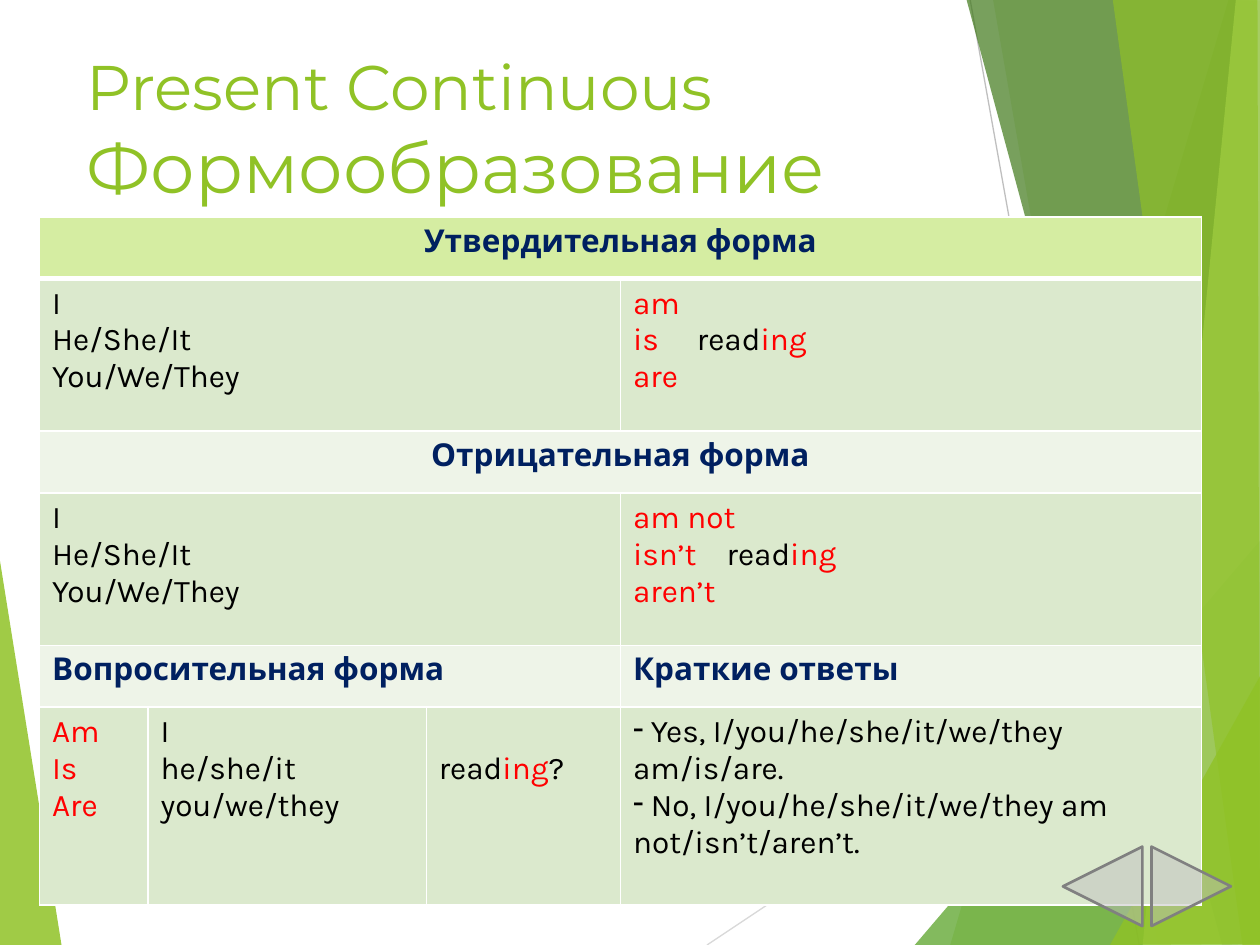
from lxml import etree
from pptx import Presentation
from pptx import util as u
from pptx.dml.color import RGBColor
from pptx.enum import shapes, text
from pptx.oxml import ns

Pt = u.Pt
COLORS = {
    "lime": "90C226", "green": "54A021", "forest": "3F7819", "pale": "C0E474",
    "white": "FFFFFF", "light_line": "D9D9D9", "gray": "BFBFBF", "outline": "808080",
    "header": "D5EDA2", "form": "DBE9CD", "heading": "EEF4E8",
    "navy": "002060", "red": "FF0000", "black": "000000",
}

# Facets and hairlines of the background, back to front; points on the slide
LEFT_FACET = ("lime", 85, [(-0.7, 316), (35.3, 540.7), (-0.7, 540)])
HAIRLINES = [
    ("light_line", (404, 540), (720.7, 329)),
    ("gray", (554.4, 0), (651, 540)),
]
RIGHT_FACETS = [
    ("lime", 30, [(702, 0), (543, 540), (721.4, 540.7), (720.7, 0.7)]),
    ("lime", 20, [(567.4, -0.7), (661.7, 540), (720.7, 540), (720.7, -0.7)]),
    ("green", 72, [(522.7, 540), (720, 309), (720.7, 540)]),
    ("forest", 70, [(552.2, -0.7), (698.4, 540), (720.7, 539.3), (720.7, -0.7)]),
    ("pale", 70, [(706.3, -0.7), (653, 540), (720.7, 540), (720, -0.7)]),
    ("lime", 65, [(635.8, -0.7), (710, 540), (720, 540), (718.6, -0.7)]),
    ("lime", 80, [(634.3, 540), (720.7, 385.2), (720.7, 539.3)]),
]

COLUMNS = [62, 159, 111, 332]
HEADING_ROW, FORM_ROW, QUESTION_ROW = 35.3, 87.1, 113
LINE_PITCH = 21


def rgb(name):
    return RGBColor.from_string(COLORS[name])


def add_xml(parent, tag, **attributes):
    return etree.SubElement(parent, ns.qn(tag), attributes)


def fill_shape(shape, color, opacity):
    shape.shadow.inherit = False
    shape.fill.solid()
    shape.fill.fore_color.rgb = rgb(color)
    for tint in shape._element.spPr.iter(ns.qn("a:srgbClr")):
        add_xml(tint, "a:alpha", val=str(opacity * 1000))


def add_facet(slide, color, opacity, points):
    corners = [(Pt(x), Pt(y)) for x, y in points]
    builder = slide.shapes.build_freeform(*corners[0])
    builder.add_line_segments(corners[1:], close=True)
    facet = builder.convert_to_shape()
    fill_shape(facet, color, opacity)
    facet.line.fill.background()


def add_hairline(slide, color, start, end):
    hairline = slide.shapes.add_connector(
        shapes.MSO_CONNECTOR.STRAIGHT, *(Pt(v) for v in start + end))
    hairline.line.color.rgb = rgb(color)
    hairline.line.width = Pt(0.75)
    add_xml(hairline._element.spPr, "a:effectLst")


def add_run(paragraph, words, size, font, color, bold=False):
    run = paragraph.add_run()
    run.text = words
    run.font.size = Pt(size)
    run.font.name = font
    run.font.bold = bold
    run.font.color.rgb = rgb(color)


def add_title(slide):
    title = slide.shapes.add_textbox(Pt(42.5), Pt(21), Pt(500), Pt(103.7))
    frame = title.text_frame
    frame.word_wrap = True
    frame.vertical_anchor = text.MSO_ANCHOR.MIDDLE
    paragraph = frame.paragraphs[0]
    add_run(paragraph, "Present Continuous", 36, "Montserrat", "lime")
    paragraph.add_line_break()
    add_run(paragraph, "Формообразование", 40, "Montserrat", "lime")


def set_borders(cell, top, bottom):
    for side, width in (("L", 1), ("R", 1), ("T", top), ("B", bottom)):
        border = add_xml(cell._tc.get_or_add_tcPr(), "a:ln" + side, w=str(Pt(width)))
        add_xml(add_xml(border, "a:solidFill"), "a:srgbClr", val=COLORS["white"])


def write_cell(cell, lines, bold=False, centered=False, tab=None, dashes=False):
    """Each line is a list of (words, color) runs."""
    frame = cell.text_frame
    for index, line in enumerate(lines):
        paragraph = frame.add_paragraph() if index else frame.paragraphs[0]
        if centered:
            paragraph.alignment = text.PP_ALIGN.CENTER
        properties = paragraph._p.get_or_add_pPr()
        if dashes:
            properties.set("marL", "0")
            properties.set("indent", "0")
            add_xml(properties, "a:buChar", char="-")
        if tab:
            add_xml(add_xml(properties, "a:tabLst"), "a:tab", pos=str(Pt(tab)), algn="l")
        for words, color in line:
            add_run(paragraph, words, 18, "Karla", color, bold)


def in_color(color, *lines):
    return [[(words, color)] for words in lines]


def write_heading(cell, words, centered=False):
    write_cell(cell, in_color("navy", words), bold=True, centered=centered)


def write_form(table, row, verbs, tab):
    first, second, third = verbs
    write_cell(table.cell(row, 0), in_color("black", "I", "He/She/It", "You/We/They"))
    write_cell(table.cell(row, 3), [
        [(first, "red")],
        [(second, "red"), ("\tread", "black"), ("ing", "red")],
        [(third, "red")],
    ], tab=tab)


def add_forms_table(slide):
    heights = [HEADING_ROW, FORM_ROW] * 2 + [HEADING_ROW, QUESTION_ROW]
    table = slide.shapes.add_table(
        len(heights), len(COLUMNS), Pt(22.6), Pt(124), Pt(sum(COLUMNS)), Pt(sum(heights))).table
    table.horz_banding = False
    for column, width in zip(table.columns, COLUMNS):
        column.width = Pt(width)

    # Fills, borders and merged cells
    for row, height in enumerate(heights):
        table.rows[row].height = Pt(height)
        fill = "header" if row == 0 else "form" if row % 2 else "heading"
        for column in range(len(COLUMNS)):
            cell = table.cell(row, column)
            set_borders(cell, top=3 if row == 1 else 1, bottom=3 if row == 0 else 1)
            cell.fill.solid()
            cell.fill.fore_color.rgb = rgb(fill)
    for row, last_column in enumerate([3, 2, 3, 2, 2]):
        table.cell(row, 0).merge(table.cell(row, last_column))

    # Affirmative and negative forms
    write_heading(table.cell(0, 0), "Утвердительная форма", centered=True)
    write_form(table, 1, ("am", "is", "are"), tab=36.5)
    write_heading(table.cell(2, 0), "Отрицательная форма", centered=True)
    write_form(table, 3, ("am not", "isn’t", "aren’t"), tab=53.5)

    # Questions and short answers
    write_heading(table.cell(4, 0), "Вопросительная форма")
    write_heading(table.cell(4, 3), "Краткие ответы")
    write_cell(table.cell(5, 0), in_color("red", "Am", "Is", "Are"))
    write_cell(table.cell(5, 1), in_color("black", "I", "he/she/it", "you/we/they"))
    reading = table.cell(5, 2)
    reading.margin_top = Pt(3.6 + LINE_PITCH)
    write_cell(reading, [[("read", "black"), ("ing", "red"), ("?", "black")]])
    write_cell(table.cell(5, 3), in_color(
        "black",
        " Yes, I/you/he/she/it/we/they am/is/are.",
        " No, I/you/he/she/it/we/they am not/isn’t/aren’t.",
    ), dashes=True)


def add_arrow(slide, left, rotation):
    arrow = slide.shapes.add_shape(
        shapes.MSO_SHAPE.ISOSCELES_TRIANGLE, Pt(left), Pt(483.8), Pt(45.4), Pt(45.4))
    arrow.rotation = rotation
    fill_shape(arrow, "gray", 49)
    arrow.line.color.rgb = rgb("outline")
    arrow.line.width = Pt(1.5)


def main():
    deck = Presentation()
    deck.slide_width, deck.slide_height = Pt(720), Pt(540)
    slide = deck.slides.add_slide(deck.slide_layouts[6])

    # Background
    add_facet(slide, *LEFT_FACET)
    for hairline in HAIRLINES:
        add_hairline(slide, *hairline)
    for facet in RIGHT_FACETS:
        add_facet(slide, *facet)

    # Content
    add_title(slide)
    add_forms_table(slide)

    # Next and previous buttons
    add_arrow(slide, 658, 90)
    add_arrow(slide, 607.4, 270)

    deck.save("out.pptx")


if __name__ == "__main__":
    main()
